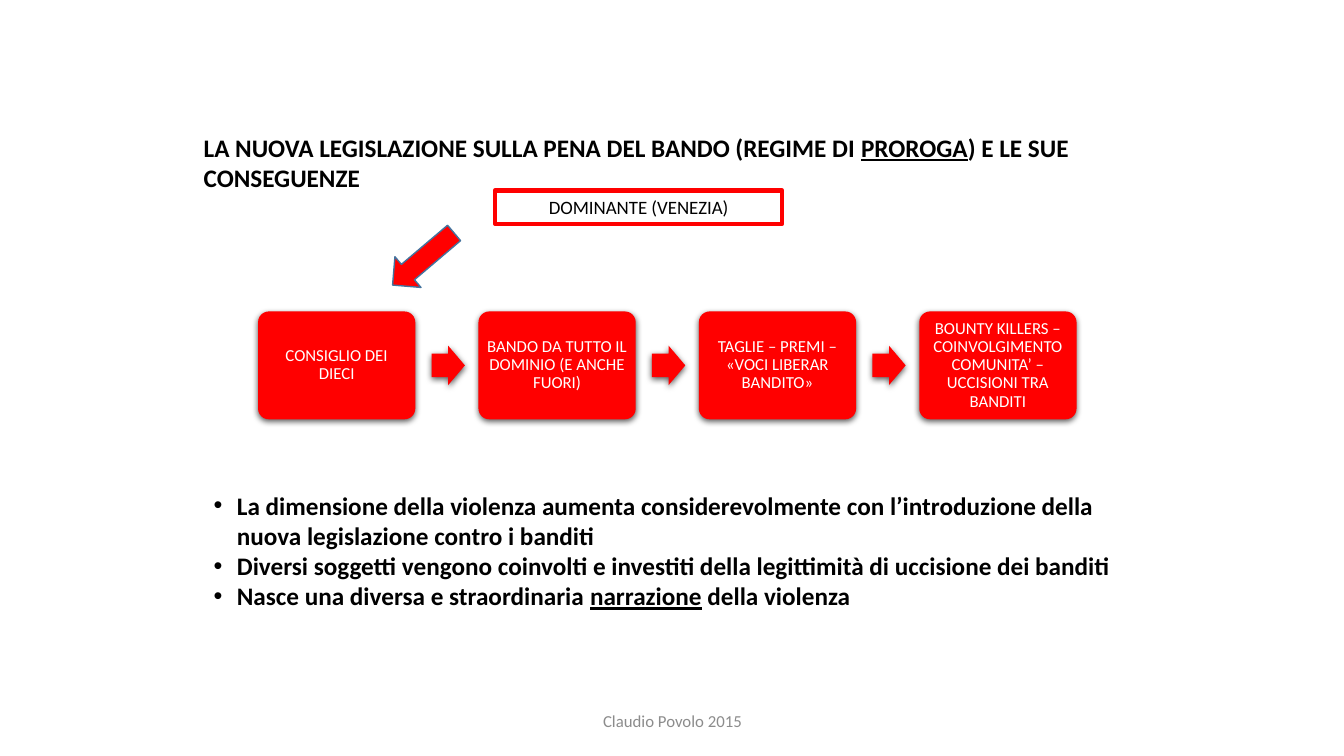
from lxml import etree
from pptx import Presentation
from pptx import util as u
from pptx.dml.color import RGBColor
from pptx.enum import shapes, text
from pptx.oxml.ns import nsdecls

RED = RGBColor(0xFF, 0x00, 0x00)
BLACK = RGBColor(0x00, 0x00, 0x00)
WHITE = RGBColor(0xFF, 0xFF, 0xFF)
GREY = RGBColor(0x8C, 0x8C, 0x8C)
BLUE = RGBColor(0x43, 0x73, 0x9E)

SHADOW = (
    f'<a:effectLst {nsdecls("a")}>'
    '<a:outerShdw blurRad="57150" dist="19050" dir="5400000" algn="ctr" rotWithShape="0">'
    '<a:srgbClr val="000000"><a:alpha val="63000"/></a:srgbClr>'
    '</a:outerShdw></a:effectLst>'
)

TITLE = "LA NUOVA LEGISLAZIONE SULLA PENA DEL BANDO (REGIME DI _PROROGA_) E LE SUE CONSEGUENZE"
STEPS = [
    "CONSIGLIO DEI DIECI",
    "BANDO DA TUTTO IL DOMINIO (E ANCHE FUORI)",
    "TAGLIE – PREMI – «VOCI LIBERAR BANDITO»",
    "BOUNTY KILLERS – COINVOLGIMENTO COMUNITA’ – UCCISIONI TRA BANDITI",
]
POINTS = [
    "La dimensione della violenza aumenta considerevolmente con l’introduzione della "
    "nuova legislazione contro i banditi",
    "Diversi soggetti vengono coinvolti e investiti della legittimità di uccisione dei banditi",
    "Nasce una diversa e straordinaria _narrazione_ della violenza",
]
STEP_LEFT, STEP_PITCH, ARROW_OFFSET = 19.2, 16.4, 12.91


class Deck:
    font = "Calibri"

    def __init__(self, width, height):
        self.prs = Presentation()
        self.prs.slide_width = u.Inches(width)
        self.prs.slide_height = u.Inches(height)
        self.slide = self.prs.slides.add_slide(self.prs.slide_layouts[1])

    def box(self, left, top, width, height):
        w, h = self.prs.slide_width, self.prs.slide_height
        return [int(share * side / 100)
                for share, side in zip((left, top, width, height), (w, h, w, h))]

    def fill_text(self, sp, lines, size, color, bold=False, align=text.PP_ALIGN.LEFT,
                  anchor=text.MSO_ANCHOR.TOP, spacing=1.0):
        tf = sp.text_frame
        tf.word_wrap = True
        tf.auto_size = text.MSO_AUTO_SIZE.NONE
        tf.vertical_anchor = anchor
        for i, line in enumerate(lines):
            p = tf.add_paragraph() if i else tf.paragraphs[0]
            p.alignment, p.line_spacing = align, spacing
            p.space_before = u.Pt(0)
            p.font.name, p.font.size = self.font, u.Pt(size)
            p.font.bold, p.font.color.rgb = bold, color
            for j, part in enumerate(line.split("_")):
                r = p.add_run()
                r.text = part
                if j % 2:
                    r.font.underline = True
        return tf

    def placeholder(self, index, area, lines):
        sp = self.slide.placeholders[index]
        sp.left, sp.top, sp.width, sp.height = self.box(*area)
        return self.fill_text(sp, lines, 18, BLACK, bold=True)

    def title(self, area, line):
        self.placeholder(0, area, [line])

    def bullets(self, area, lines):
        for p in self.placeholder(1, area, lines).paragraphs:
            pPr = p._p.get_or_add_pPr()
            pPr.set("marL", str(u.Inches(0.23)))
            pPr.set("indent", str(-u.Inches(0.23)))

    def label(self, area, line, size, color):
        sp = self.slide.shapes.add_textbox(*self.box(*area))
        self.fill_text(sp, [line], size, color, align=text.PP_ALIGN.CENTER,
                       anchor=text.MSO_ANCHOR.MIDDLE)

    def shape(self, kind, area, fill=RED, line=None, line_width=1, adjust=(), shadow=False):
        sp = self.slide.shapes.add_shape(kind, *self.box(*area))
        sp.shadow.inherit = False
        if fill is None:
            sp.fill.background()
        else:
            sp.fill.solid()
            sp.fill.fore_color.rgb = fill
        if line is None:
            sp.line.fill.background()
        else:
            sp.line.color.rgb = line
            sp.line.width = u.Pt(line_width)
        for i, value in enumerate(adjust):
            sp.adjustments[i] = value
        if shadow:
            spPr = sp._element.spPr
            spPr.replace(spPr.find("{*}effectLst"), etree.fromstring(SHADOW))
        return sp

    def frame(self, area, line):
        sp = self.shape(shapes.MSO_SHAPE.RECTANGLE, area, fill=None, line=RED, line_width=3)
        self.fill_text(sp, [line], 13.5, BLACK, align=text.PP_ALIGN.CENTER,
                       anchor=text.MSO_ANCHOR.MIDDLE)

    def step(self, area, line):
        sp = self.shape(shapes.MSO_SHAPE.ROUNDED_RECTANGLE, area, adjust=[0.1], shadow=True)
        tf = self.fill_text(sp, [line], 12, WHITE, align=text.PP_ALIGN.CENTER,
                            anchor=text.MSO_ANCHOR.MIDDLE, spacing=0.9)
        tf.margin_left = tf.margin_right = u.Inches(0.05)
        tf.margin_top = tf.margin_bottom = u.Inches(0.05)

    def arrow(self, area):
        self.shape(shapes.MSO_SHAPE.RIGHT_ARROW, area, adjust=[0.6, 0.5], shadow=True)

    def pointer(self, area, rotation):
        sp = self.shape(shapes.MSO_SHAPE.LEFT_ARROW, area, line=BLUE)
        sp.rotation = rotation


def main():
    deck = Deck(13.33, 7.5)
    deck.title((14.4, 16.8, 68.94, 9.47), TITLE)
    deck.frame((36.83, 25.2, 21.38, 4.4), "DOMINANTE (VENEZIA)")
    for i, line in enumerate(STEPS):
        left = STEP_LEFT + i * STEP_PITCH
        deck.step((left, 41.2, 11.7, 14.27), line)
        if i < len(STEPS) - 1:
            deck.arrow((left + ARROW_OFFSET, 45.73, 2.48, 5.2))
    deck.pointer((28.5, 31.6, 6, 5.33), 319.7)
    deck.bullets((15.15, 64.13, 68.27, 17.47), POINTS)
    deck.label((33.16, 92.67, 33.76, 5.33), "Claudio Povolo 2015", 12, GREY)
    deck.prs.save("out.pptx")


if __name__ == "__main__":
    main()
